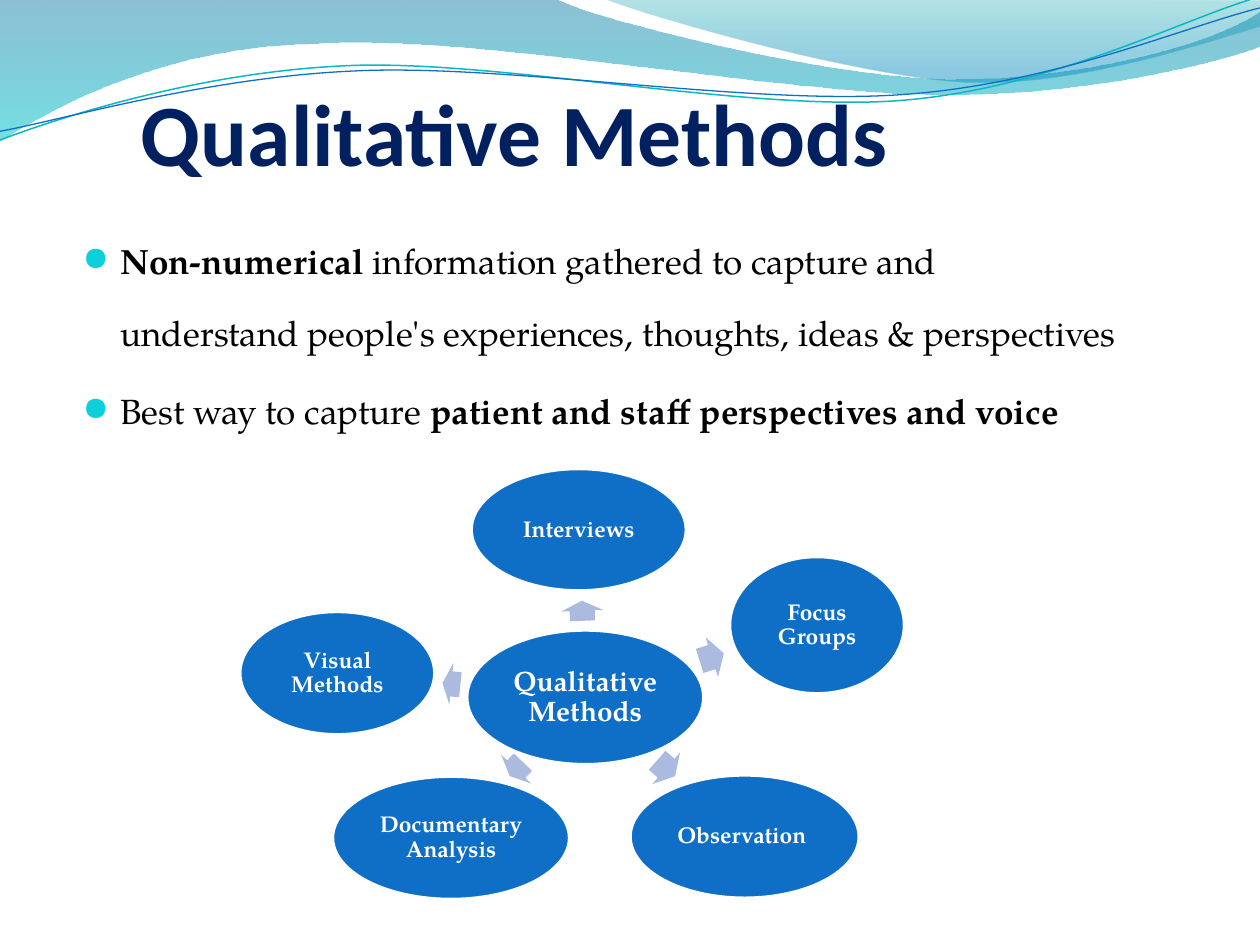
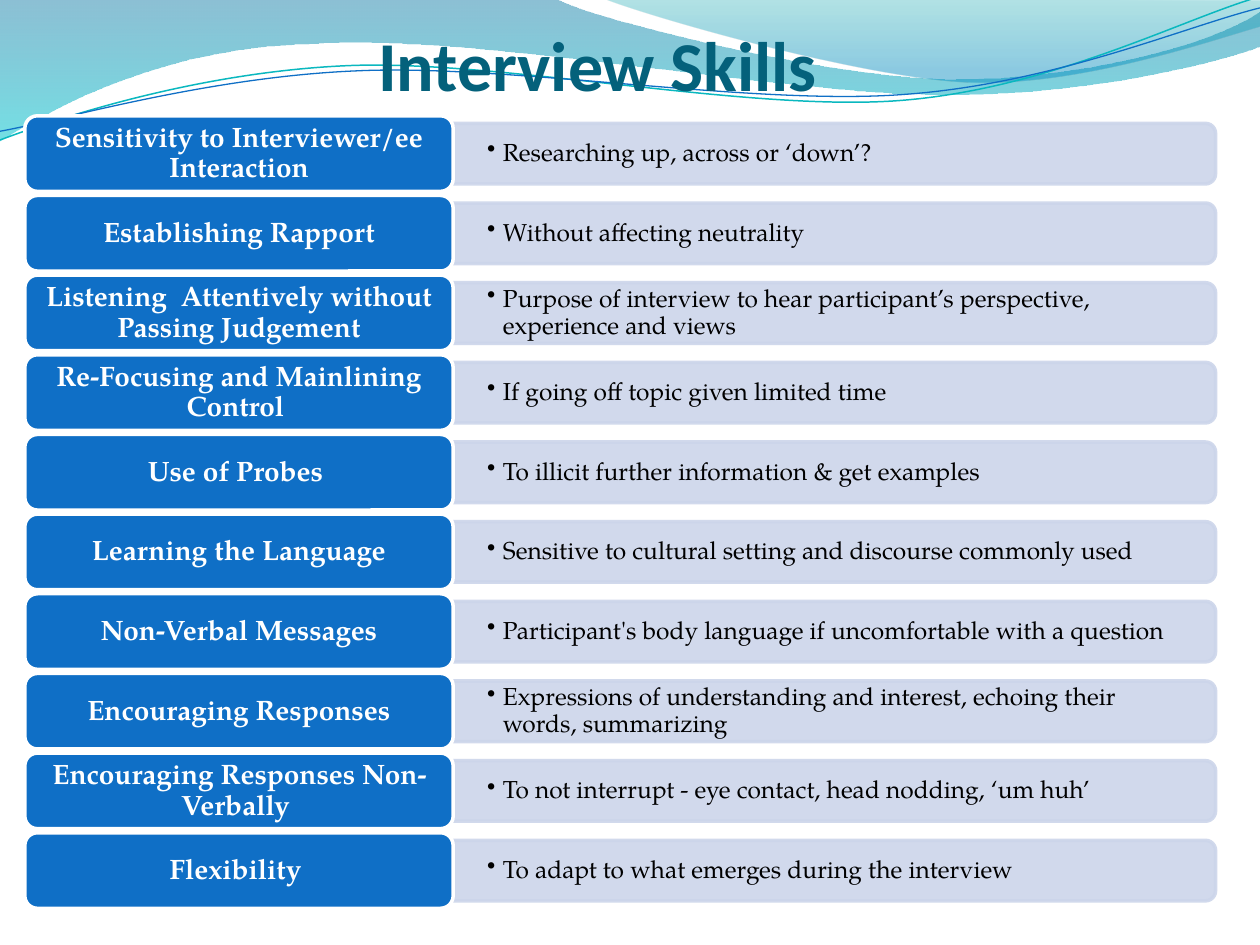
from pptx import Presentation
from pptx.dml.color import RGBColor
from pptx.enum.shapes import MSO_SHAPE as Kind
from pptx.enum.text import MSO_ANCHOR as Anchor, PP_ALIGN as Align
from pptx.oxml.ns import qn
from pptx.util import Pt
from lxml.etree import SubElement as Sub

# Shared look
rgb = RGBColor.from_string
BLUE, PALE, ARROW, WHITE, BLACK = "0F6FC6", "CCD5EA", "ABBBDF", "FFFFFF", "000000"
HEAD, BODY, SIGN = "Calibri", "TeX Gyre Pagella", "OpenSymbol"


def paint(shape, fill=None, line=None, width=2, alphas=()):
    """Fill is a colour, a list of (position, colour) stops, or None."""
    shape.shadow.inherit = False
    if fill is None:
        shape.fill.background()
    elif isinstance(fill, str):
        shape.fill.solid()
        shape.fill.fore_color.rgb = rgb(fill)
    else:
        shape.fill.gradient()
        shape.fill.gradient_angle = 270
        for stop, (pos, tint) in zip(shape.fill.gradient_stops, fill):
            stop.position = pos
            stop.color.rgb = rgb(tint)
    if line:
        shape.line.color.rgb = rgb(line)
        shape.line.width = Pt(width)
    else:
        shape.line.fill.background()
    tints = list(shape._element.spPr.iter(qn("a:srgbClr")))
    for tint, alpha in zip(tints, alphas):
        Sub(tint, qn("a:alpha"), val=str(alpha * 1000))


def style(para, size, tint, bold=False, font=BODY, lead=0.9, before=0, after=0,
          align=Align.CENTER, mark=None, indent=0, dot=None):
    para.alignment = align
    para.line_spacing = lead
    para.space_before, para.space_after = Pt(before), Pt(after)
    for run in para.runs:
        run.font.name, run.font.size, run.font.bold = font, Pt(size), bold
        run.font.color.rgb = rgb(tint)
    if mark:
        props = para._p.get_or_add_pPr()
        props.set("marL", str(Pt(indent)))
        props.set("indent", str(-Pt(indent)))
        if dot:
            Sub(Sub(props, qn("a:buClr")), qn("a:srgbClr"), val=dot)
            Sub(props, qn("a:buSzPct"), val="95000")
        Sub(props, qn("a:buFont"), typeface=SIGN)
        Sub(props, qn("a:buChar"), char=mark)


deck = Presentation()
deck.slide_width, deck.slide_height = Pt(720), Pt(540)

# Waves: start point, then straight (2 numbers) or curved (6 numbers) steps
waves = [
    ((0, 0), [(317, -1), (343, 12, 478, 45, 546, 45), (614, 45, 690, 27, 720, 6.5),
              (721, 26), (708, 32, 626, 55, 537, 54), (447, 54, 275, 20, 185, 24.5),
              (93, 26, 33, 60, -1, 81), (0, 0)],
     dict(fill=[(0, "0074A1"), (1, "00C6CF")], alphas=(45, 55))),
    ((345, -1), [(366.5, 8, 491, 44.5, 553.5, 47), (616, 49.5, 692, 23, 720, 15),
                 (720, 0), (345, -1)],
     dict(fill=[(0, "00A1A9"), (0.8, "008BBF")], alphas=(30, 45))),
    ((0, 80), [(34.5, 67, 114, 41, 199.5, 37.5), (284.5, 34, 427, 64, 513.5, 57.5),
               (600, 51, 675.5, 11, 718.5, -1.5)],
     dict(line="0AB8BF", width=0.85)),
    ((0, 75), [(34, 69, 118, 44, 204, 40.5), (290, 36.5, 430, 60.5, 516, 54),
               (602, 48, 677.5, 15, 720, 4.5)],
     dict(line=BLUE, width=0.75)),
]

# Titles: text, box, size, colour, right inset
titles = [
    ("Qualitative Methods", (40.3, 26.2, 507.5, 79.2), 50, "002060", 0),
    ("Interview Skills", (36, 15, 648, 45.5), 40, "04617B", 37),
]

# Both slides: waves and title
pages = []
for text, box, size, tint, inset in titles:
    page = deck.slides.add_slide(deck.slide_layouts[6]).shapes
    pages.append(page)
    for start, parts, look in waves:
        pen = page.build_freeform(Pt(start[0]), Pt(start[1]))
        for part in parts:
            dots = [(Pt(x), Pt(y)) for x, y in zip(part[::2], part[1::2])]
            pen.add_line_segments(dots, close=False)
        wave = pen.convert_to_shape()

        # Join the three points of each curved step into one curve
        route = next(wave._element.iter(qn("a:path")))
        lines = iter(route.findall(qn("a:lnTo")))
        for part in parts:
            steps = [next(lines) for _ in part[::2]]
            if len(steps) == 3:
                curve = Sub(route, qn("a:cubicBezTo"))
                for step in steps:
                    curve.append(step[0])
                    route.remove(step)
            else:
                route.append(steps[0])
        if "fill" in look:
            Sub(route, qn("a:close"))
        paint(wave, **look)

    frame = page.add_textbox(*map(Pt, box)).text_frame
    frame.word_wrap = True
    frame.vertical_anchor = Anchor.BOTTOM
    frame.margin_left, frame.margin_right = 0, Pt(inset)
    frame.margin_top, frame.margin_bottom = Pt(3.6), 0
    frame.text = text
    style(frame.paragraphs[0], size, tint, True, HEAD, lead=1)

first, second = pages

# Slide 1: bullets, as (text, bold) runs
points = [
    [("Non-numerical ", True),
     ("information gathered to capture and understand people's experiences, "
      "thoughts, ideas & perspectives", False)],
    [("Best way to capture ", False),
     ("patient and staff perspectives and voice", True)],
]
frame = first.add_textbox(Pt(40.2), Pt(116.8), Pt(609), Pt(397)).text_frame
frame.word_wrap = True
for n, point in enumerate(points):
    para = frame.add_paragraph() if n else frame.paragraphs[0]
    for text, bold in point:
        para.add_run().text = text
    style(para, 20, BLACK, lead=1.7, before=4, align=Align.LEFT,
          mark="●", indent=21.6, dot="0BD0D9")
    for run, (text, bold) in zip(para.runs, point):
        run.font.bold = bold

# Slide 1: hub and the methods around it
methods = [
    ("Qualitative Methods", 16, (266.7, 360, 135.5, 77)),
    ("Interviews", 13, (269.2, 267.7, 123, 70)),
    ("Focus Groups", 13, (416.9, 318, 100, 78.5)),
    ("Observation ", 13, (360, 442.8, 131, 70.5)),
    ("Documentary Analysis", 13, (190, 443.5, 135.5, 70.5)),
    ("Visual Methods", 13, (137, 349.4, 111.5, 70.5)),
]
for text, size, box in methods:
    oval = first.add_shape(Kind.OVAL, *map(Pt, box))
    paint(oval, BLUE, WHITE)
    frame = oval.text_frame
    frame.word_wrap = True
    frame.vertical_anchor = Anchor.MIDDLE
    frame.margin_left = frame.margin_right = Pt(1.3)
    frame.margin_top = frame.margin_bottom = Pt(1.3)
    frame.text = text
    style(frame.paragraphs[0], size, WHITE, True, after=size * 0.35)

# Slide 1: arrows, as left, top, width, turn
arrows = [
    (327, 337, 11.5, 267.8),
    (399.5, 363.5, 14.5, 342.7),
    (373.8, 427, 13.7, 41.2),
    (289.5, 427.5, 11, 133.8),
    (252.8, 378.8, 10.3, 185.5),
]
for left, top, width, turn in arrows:
    arrow = first.add_shape(Kind.RIGHT_ARROW, Pt(left), Pt(top), Pt(width), Pt(24))
    arrow.adjustments[0], arrow.adjustments[1] = 0.6, 0.5
    arrow.rotation = turn
    paint(arrow, ARROW)

# Slide 2: one row per skill
skills = [
    ("Sensitivity to Interviewer/ee Interaction", "Researching up, across or ‘down’?"),
    ("Establishing Rapport", "Without affecting neutrality"),
    ("Listening  Attentively without Passing Judgement",
     "Purpose of interview to hear participant’s perspective, experience and views"),
    ("Re-Focusing and Mainlining Control ", "If going off topic given limited time"),
    ("Use of Probes ", "To illicit further information & get examples"),
    ("Learning the Language",
     "Sensitive to cultural setting and discourse commonly used"),
    ("Non-Verbal Messages",
     "Participant's body language if uncomfortable with a question"),
    ("Encouraging Responses",
     "Expressions of understanding and interest, echoing their words, summarizing"),
    ("Encouraging Responses Non-Verbally ",
     "To not interrupt - eye contact, head nodding, ‘um huh’"),
    ("Flexibility ", "To adapt to what emerges during the interview"),
]
TOP, PITCH, TALL = 66.2, 45.52, 43.2
LEFT, SPLIT, LONG, THICK = 14.2, 259, 435.6, 34.6
for n, (skill, hint) in enumerate(skills):
    top = TOP + n * PITCH
    mid = top + TALL / 2

    # Panel is a tall tab turned on its side
    panel = second.add_shape(Kind.ROUND_2_SAME_RECTANGLE,
                             Pt(SPLIT + (LONG - THICK) / 2), Pt(mid - LONG / 2),
                             Pt(THICK), Pt(LONG))
    panel.rotation = 90
    paint(panel, PALE, PALE, alphas=(90, 90))

    note = second.add_textbox(Pt(SPLIT), Pt(mid - 15.5), Pt(433.5), Pt(31))
    frame = note.text_frame
    frame.margin_left = frame.margin_right = Pt(19.4)
    frame.margin_top = frame.margin_bottom = Pt(10)
    frame.text = hint
    style(frame.paragraphs[0], 14, BLACK, after=2.1, align=Align.LEFT,
          mark="•", indent=9)

    label = second.add_shape(Kind.ROUNDED_RECTANGLE, Pt(LEFT), Pt(top),
                             Pt(SPLIT - LEFT), Pt(TALL))
    paint(label, BLUE, WHITE)
    label.text_frame.margin_top = label.text_frame.margin_bottom = Pt(2)
    label.text_frame.text = skill
    style(label.text_frame.paragraphs[0], 16, WHITE, True, after=5.6)

    for frame in (note.text_frame, label.text_frame):
        frame.word_wrap = True
        frame.vertical_anchor = Anchor.MIDDLE

deck.save("out.pptx")
